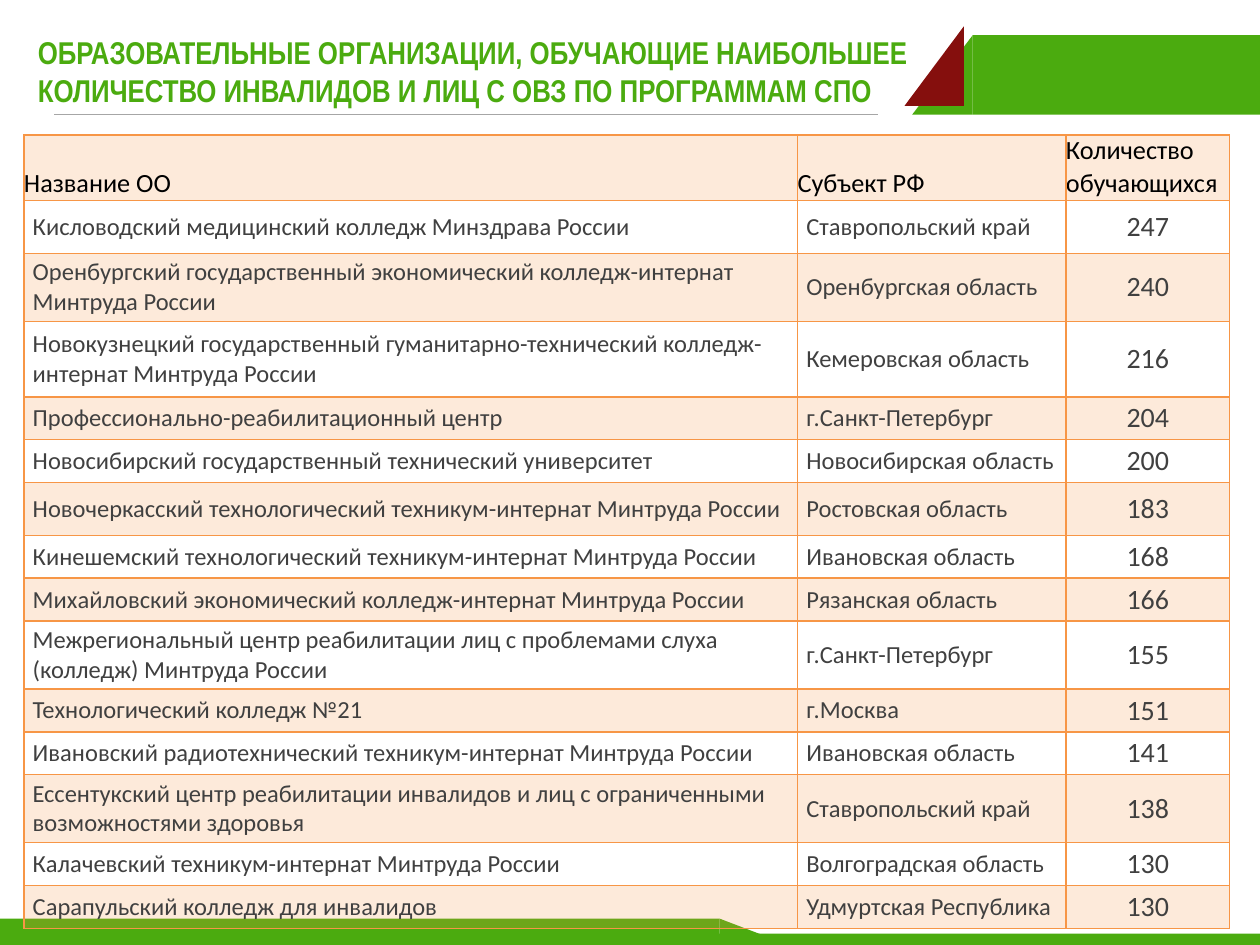
import dataclasses

import pptx
import pptx.dml.color
import pptx.enum.shapes
import pptx.enum.text
import pptx.oxml
import pptx.oxml.ns
import pptx.util

Inches = pptx.util.Inches
Pt = pptx.util.Pt
RGB = pptx.dml.color.RGBColor.from_string
SHAPE = pptx.enum.shapes.MSO_SHAPE
ALIGN = pptx.enum.text.PP_ALIGN
ANCHOR = pptx.enum.text.MSO_ANCHOR

TITLE = ("ОБРАЗОВАТЕЛЬНЫЕ ОРГАНИЗАЦИИ, ОБУЧАЮЩИЕ НАИБОЛЬШЕЕ "
         "КОЛИЧЕСТВО ИНВАЛИДОВ И ЛИЦ С ОВЗ ПО ПРОГРАММАМ СПО")
HEADER = ("Название ОО", "Субъект РФ", "Количество обучающихся")
COLLEGES = [
    ("Кисловодский медицинский колледж Минздрава России", "Ставропольский край", 247),
    ("Оренбургский государственный экономический колледж-интернат Минтруда России",
     "Оренбургская область", 240),
    ("Новокузнецкий государственный гуманитарно-технический колледж-интернат Минтруда России",
     "Кемеровская область", 216),
    ("Профессионально-реабилитационный центр", "г.Санкт-Петербург", 204),
    ("Новосибирский государственный технический университет", "Новосибирская область", 200),
    ("Новочеркасский технологический техникум-интернат Минтруда России",
     "Ростовская область", 183),
    ("Кинешемский технологический техникум-интернат Минтруда России",
     "Ивановская область", 168),
    ("Михайловский экономический колледж-интернат Минтруда России", "Рязанская область", 166),
    ("Межрегиональный центр реабилитации лиц с проблемами слуха (колледж) Минтруда России",
     "г.Санкт-Петербург", 155),
    ("Технологический колледж №21", "г.Москва", 151),
    ("Ивановский радиотехнический техникум-интернат Минтруда России",
     "Ивановская область", 141),
    ("Ессентукский центр реабилитации инвалидов и лиц с ограниченными возможностями здоровья",
     "Ставропольский край", 138),
    ("Калачевский техникум-интернат Минтруда России", "Волгоградская область", 130),
    ("Сарапульский колледж для инвалидов", "Удмуртская Республика", 130),
]
COLUMN_WIDTHS = (6.14, 2.13, 1.3)
ROW_HEIGHTS = (0.51, 0.42, 0.54, 0.6, 0.34, 0.34, 0.42, 0.34,
               0.34, 0.54, 0.34, 0.34, 0.54, 0.34, 0.34)


@dataclasses.dataclass(frozen=True)
class Theme:
    green: str = "4BAB0F"
    red: str = "850F0D"
    rule: str = "A6A6A6"
    border: str = "F79646"
    band_alpha: int = 20
    heading: str = "000000"
    body: str = "404040"
    title_font: str = "Arial Narrow"
    table_font: str = "Calibri"
    title_size: int = 18
    heading_size: int = 15
    body_size: int = 14
    count_size: int = 16


class Deck:
    """Holds the theme and the current slide and draws each kind of element."""

    def __init__(self, prs, theme):
        self.theme = theme
        self.s = prs.slides.add_slide(prs.slide_layouts[5])

    def style(self, target, values):
        for name, value in values.items():
            setattr(target, name, value)

    def text(self, p, text, font, size, color, bold=False):
        r = p.add_run()
        r.text = text
        self.style(r.font, {"name": font, "size": Pt(size), "bold": bold})
        r.font.color.rgb = RGB(color)

    def title(self, text, left, top, width, height):
        sp = self.s.shapes.title
        self.style(sp, {"left": Inches(left), "top": Inches(top),
                        "width": Inches(width), "height": Inches(height)})
        tf = sp.text_frame
        self.style(tf, {"word_wrap": True, "vertical_anchor": ANCHOR.TOP,
                        "auto_size": pptx.enum.text.MSO_AUTO_SIZE.NONE})
        p = tf.paragraphs[0]
        p.alignment = ALIGN.LEFT
        self.text(p, text, self.theme.title_font, self.theme.title_size,
                  self.theme.green, True)

    def shape(self, kind, left, top, width, height, color, flip=False):
        sp = self.s.shapes.add_shape(kind, Inches(left), Inches(top),
                                     Inches(width), Inches(height))
        sp.shadow.inherit = False
        sp.fill.solid()
        sp.fill.fore_color.rgb = RGB(color)
        sp.line.fill.background()
        if flip:
            sp._element.spPr.get_or_add_xfrm().set("flipH", "1")

    def line(self, x1, y1, x2, y2, color, width):
        cx = self.s.shapes.add_connector(pptx.enum.shapes.MSO_CONNECTOR.STRAIGHT,
                                         Inches(x1), Inches(y1), Inches(x2), Inches(y2))
        cx.line.color.rgb = RGB(color)
        cx.line.width = Pt(width)
        cx._element.spPr.append(pptx.oxml.parse_xml(
            f"<a:effectLst {pptx.oxml.ns.nsdecls('a')}/>"))

    def borders(self, cell):
        tcPr = cell._tc.get_or_add_tcPr()
        for side in "LRTB":
            tcPr.append(pptx.oxml.parse_xml(
                f'<a:ln{side} {pptx.oxml.ns.nsdecls("a")} w="{Pt(1)}"><a:solidFill>'
                f'<a:srgbClr val="{self.theme.border}"/></a:solidFill></a:ln{side}>'))

    def band(self, cell):
        qn = pptx.oxml.ns.qn
        cell.fill.solid()
        cell.fill.fore_color.rgb = RGB(self.theme.border)
        color = cell._tc.tcPr.find(f"{qn('a:solidFill')}/{qn('a:srgbClr')}")
        color.append(pptx.oxml.parse_xml(
            f'<a:alpha {pptx.oxml.ns.nsdecls("a")} val="{self.theme.band_alpha * 1000}"/>'))

    def cell(self, cell, text, row, col):
        t = self.theme
        header, count = row == 0, row > 0 and col == 2
        side, top, bottom = (0, 0, 0.01) if header else (0.07, 0.03, 0.03)
        self.borders(cell)
        self.style(cell, {"margin_left": Inches(side), "margin_right": Inches(side),
                          "margin_top": Inches(top), "margin_bottom": Inches(bottom),
                          "vertical_anchor": ANCHOR.BOTTOM if header else ANCHOR.MIDDLE})
        if row % 2:
            cell.fill.background()
        else:
            self.band(cell)
        p = cell.text_frame.paragraphs[0]
        p.alignment = ALIGN.CENTER if count else ALIGN.LEFT
        size = t.heading_size if header else t.count_size if count else t.body_size
        self.text(p, str(text), t.table_font, size, t.heading if header else t.body)

    def table(self, rows, left, top, widths, heights):
        table = self.s.shapes.add_table(len(rows), len(widths), Inches(left), Inches(top),
                                        Inches(sum(widths)), Inches(sum(heights))).table
        self.style(table, {"first_row": False, "horz_banding": False})
        for column, width in zip(table.columns, widths):
            column.width = Inches(width)
        for i, (row, height) in enumerate(zip(rows, heights)):
            table.rows[i].height = Inches(height)
            for j, text in enumerate(row):
                self.cell(table.cell(i, j), text, i, j)


def main():
    prs = pptx.Presentation()
    prs.slide_width, prs.slide_height = Inches(10), Inches(7.5)
    theme = Theme()
    deck = Deck(prs, theme)
    deck.line(0.43, 0.91, 6.97, 0.91, theme.rule, 0.75)
    deck.shape(SHAPE.RECTANGLE, 7.72, 0.28, 2.28, 0.63, theme.green)
    deck.shape(SHAPE.RIGHT_TRIANGLE, 7.24, 0.28, 0.48, 0.63, theme.green, flip=True)
    deck.shape(SHAPE.RECTANGLE, 0, 7.29, 5.71, 0.21, theme.green)
    deck.shape(SHAPE.RIGHT_TRIANGLE, 5.71, 7.29, 0.55, 0.21, theme.green)
    deck.shape(SHAPE.RECTANGLE, 2.4, 7.41, 7.6, 0.09, theme.green)
    deck.shape(SHAPE.RIGHT_TRIANGLE, 7.18, 0.21, 0.47, 0.63, theme.red, flip=True)
    deck.title(TITLE, 0.2, 0.21, 7.48, 0.93)
    deck.table([HEADER, *COLLEGES], 0.19, 1.07, COLUMN_WIDTHS, ROW_HEIGHTS)
    prs.save("out.pptx")


if __name__ == "__main__":
    main()
